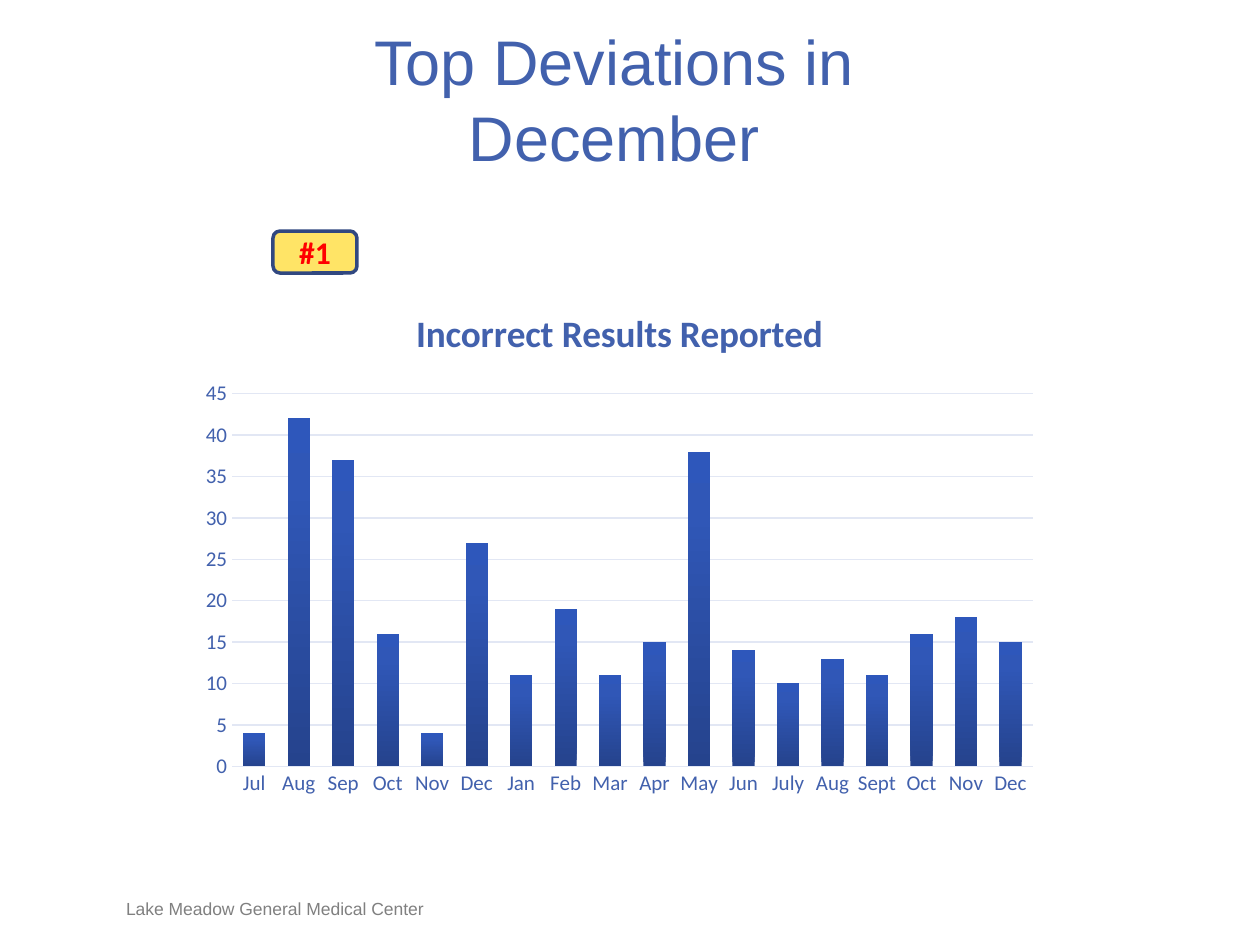
from copy import deepcopy
from dataclasses import dataclass

from lxml import etree
from pptx import Presentation
from pptx.chart.data import CategoryChartData
from pptx.dml.color import RGBColor
from pptx.enum import chart as ch, shapes, text
from pptx.oxml.ns import qn
from pptx.util import Pt


@dataclass(frozen=True)
class Theme:
    blue: RGBColor = RGBColor(0x42, 0x61, 0xAD)
    gray: RGBColor = RGBColor(0x80, 0x80, 0x80)
    red: RGBColor = RGBColor(0xFF, 0x00, 0x00)
    yellow: RGBColor = RGBColor(0xFF, 0xE4, 0x66)
    navy: RGBColor = RGBColor(0x31, 0x48, 0x80)
    grid: RGBColor = RGBColor(0xE2, 0xE7, 0xF4)
    bar_stops: tuple = ((0, "25438D"), (0.8, "3057B7"), (1, "2E57BB"))
    head_font: str = "Arial"
    body_font: str = "Calibri"
    title: float = 36
    chart_title: float = 21.3
    badge: float = 18
    axis: float = 12
    footer: float = 10


T = Theme()
MONTHS = ["Jul", "Aug", "Sep", "Oct", "Nov", "Dec", "Jan", "Feb", "Mar",
          "Apr", "May", "Jun", "July", "Aug", "Sept", "Oct", "Nov", "Dec"]
COUNTS = [4, 42, 37, 16, 4, 27, 11, 19, 11, 15, 38, 14, 10, 13, 11, 16, 18, 15]


def style_font(font, name, size, color, bold=False):
    font.name, font.size, font.bold = name, Pt(size), bold
    font.color.rgb = color


def add_text(s, box, words, size, color, align, anchor):
    tf = s.shapes.add_textbox(*map(Pt, box)).text_frame
    tf.word_wrap = True
    tf.margin_left = tf.margin_right = tf.margin_top = tf.margin_bottom = 0
    tf.vertical_anchor = anchor
    p = tf.paragraphs[0]
    p.text, p.alignment = words, align
    style_font(p.font, T.head_font, size, color)


def add_badge(s, box, words):
    sp = s.shapes.add_shape(shapes.MSO_SHAPE.ROUNDED_RECTANGLE, *map(Pt, box))
    sp.shadow.inherit = False
    sp.fill.solid()
    sp.fill.fore_color.rgb = T.yellow
    sp.line.color.rgb, sp.line.width = T.navy, Pt(2)
    tf = sp.text_frame
    tf.vertical_anchor = text.MSO_ANCHOR.MIDDLE
    p = tf.paragraphs[0]
    p.text, p.alignment = words, text.PP_ALIGN.CENTER
    style_font(p.font, T.body_font, T.badge, T.red, bold=True)


def fill_bars(series):
    fill = series.format.fill
    fill.gradient()
    fill.gradient_angle = 90
    # The default gradient has two stops; add the third
    stops = next(series._element.iter(qn("a:gsLst")))
    stops.append(deepcopy(stops[-1]))
    for stop, (position, color) in zip(fill.gradient_stops, T.bar_stops):
        stop.position = position
        stop.color.rgb = RGBColor.from_string(color)


def style_axis(axis):
    axis.major_tick_mark = axis.minor_tick_mark = ch.XL_TICK_MARK.NONE
    style_font(axis.tick_labels.font, T.body_font, T.axis, T.blue)


def style_line(line):
    line.color.rgb, line.width = T.grid, Pt(0.75)


def place_plot(chart, **fractions):
    area = chart._chartSpace.chart.plotArea
    for old in area.findall(qn("c:layout")):
        area.remove(old)
    layout = etree.Element(qn("c:layout"))
    manual = etree.SubElement(layout, qn("c:manualLayout"))
    settings = {"layoutTarget": "inner", "xMode": "edge", "yMode": "edge", **fractions}
    for tag, val in settings.items():
        etree.SubElement(manual, qn(f"c:{tag}")).set("val", str(val))
    area.insert(0, layout)


def add_column_chart(s, box, title, categories, values):
    data = CategoryChartData()
    data.categories = categories
    data.add_series(title, values)
    kind = ch.XL_CHART_TYPE.COLUMN_CLUSTERED
    chart = s.shapes.add_chart(kind, *map(Pt, box), data).chart
    chart.has_legend = False
    chart.font.name, chart.font.size = T.body_font, Pt(10)

    # Chart title
    chart.has_title = True
    p = chart.chart_title.text_frame.paragraphs[0]
    p.text = title
    style_font(p.font, T.body_font, T.chart_title, T.blue, bold=True)
    chart.chart_title.include_in_layout = False

    # Columns
    plot = chart.plots[0]
    plot.vary_by_categories = False
    plot.gap_width, plot.overlap = 100, -24
    fill_bars(plot.series[0])

    # Axes and gridlines
    style_axis(chart.category_axis)
    style_line(chart.category_axis.format.line)
    axis = chart.value_axis
    style_axis(axis)
    axis.format.line.fill.background()
    axis.minimum_scale, axis.maximum_scale, axis.major_unit = 0, 45, 5
    axis.has_major_gridlines = True
    style_line(axis.major_gridlines.format.line)
    place_plot(chart, x=0.05, y=0.21, w=0.93, h=0.71)


def main():
    prs = Presentation()
    prs.slide_width, prs.slide_height = Pt(720), Pt(540)
    s = prs.slides.add_slide(prs.slide_layouts[6])

    # Footer and title
    add_text(s, (72, 512.5, 228, 12.5), "Lake Meadow General Medical Center",
             T.footer, T.gray, text.PP_ALIGN.LEFT, text.MSO_ANCHOR.BOTTOM)
    add_text(s, (156, 13, 390, 87), "Top Deviations in December",
             T.title, T.blue, text.PP_ALIGN.CENTER, text.MSO_ANCHOR.TOP)

    # Rank badge and its chart
    add_badge(s, (156, 132, 48, 24), "#1")
    add_column_chart(s, (108, 162, 492, 300), "Incorrect Results Reported",
                     MONTHS, COUNTS)
    prs.save("out.pptx")


if __name__ == "__main__":
    main()
